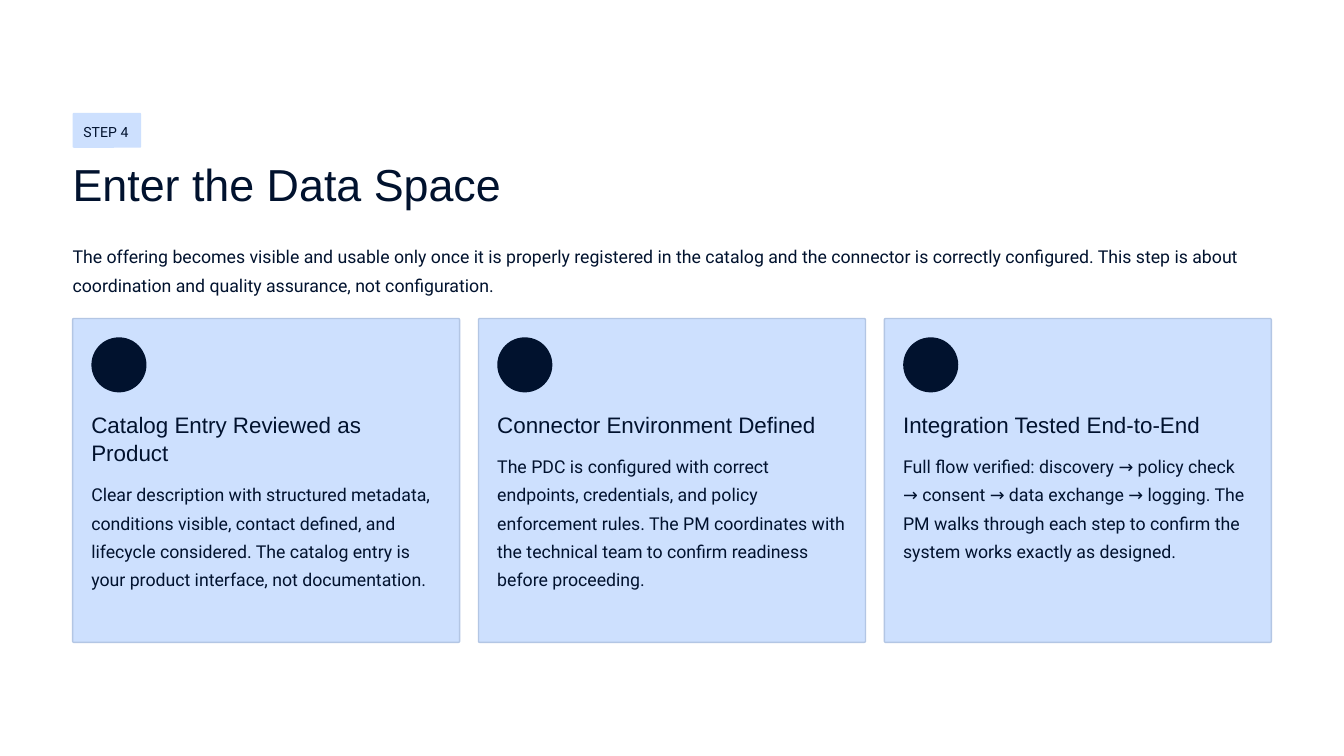
from pptx import Presentation
from pptx.dml.color import RGBColor
from pptx.enum.shapes import MSO_SHAPE
from pptx.util import Inches, Pt

ROUND = MSO_SHAPE.ROUNDED_RECTANGLE
OVAL = MSO_SHAPE.OVAL
WHITE = RGBColor(0xFF, 0xFF, 0xFF)
NAVY = RGBColor(0x01, 0x12, 0x2E)
SKY = RGBColor(0xCD, 0xE0, 0xFE)
EDGE = RGBColor(0xB3, 0xC6, 0xE4)

WIDTH = 10
HEIGHT = WIDTH * 9 / 16
LEFT, STEP = 0.54, 3.02
WIDE, TALL, TOP = 2.88, 2.41, 2.37
PAD, DOT, ROW, BEND = 0.14, 0.41, 0.21, 0.01
HEAD_Y = 3.05

STYLES = {
    "tag": (1.33, {"name": "Roboto", "size": Pt(7.5)}),
    "title": (1.04, {"name": "Arial", "size": Pt(24)}),
    "head": (1.04, {"name": "Arial", "size": Pt(12)}),
    "body": (1.33, {"name": "Roboto", "size": Pt(9.5)}),
}

CARDS = [
    ("Catalog Entry Reviewed as Product", 2,
     "Clear description with structured metadata, conditions visible, contact defined, "
     "and lifecycle considered. The catalog entry is your product interface, not documentation."),
    ("Connector Environment Defined", 1,
     "The PDC is configured with correct endpoints, credentials, and policy enforcement rules. "
     "The PM coordinates with the technical team to confirm readiness before proceeding."),
    ("Integration Tested End-to-End", 1,
     "Full flow verified: discovery → policy check → consent → data exchange → logging. "
     "The PM walks through each step to confirm the system works exactly as designed."),
]

deck = Presentation()
deck.slide_width, deck.slide_height = Inches(WIDTH), Inches(HEIGHT)
slide = deck.slides.add_slide(deck.slide_layouts[6])
slide.background.fill.solid()
slide.background.fill.fore_color.rgb = WHITE


def add_form(kind, box, fill, edge=None):
    form = slide.shapes.add_shape(kind, *map(Inches, box))
    form.shadow.inherit = False
    form.fill.solid()
    form.fill.fore_color.rgb = fill
    if kind == ROUND:
        form.adjustments[0] = BEND / min(box[2:])
    if edge:
        form.line.color.rgb = edge
        form.line.width = Pt(0.75)
    else:
        form.line.fill.background()


def add_text(box, text, style):
    frame = slide.shapes.add_textbox(*map(Inches, box)).text_frame
    frame.word_wrap = True
    for side in ("left", "right", "top", "bottom"):
        setattr(frame, f"margin_{side}", 0)
    line = frame.paragraphs[0]
    run = line.add_run()
    run.text = text
    line.line_spacing, looks = STYLES[style]
    for key, value in looks.items():
        setattr(run.font, key, value)
    run.font.color.rgb = NAVY


add_form(ROUND, (LEFT, 0.84, 0.51, 0.26), SKY)
add_text((LEFT + 0.08, 0.88, 0.85, 0.17), "STEP 4", "tag")
add_text((LEFT, 1.15, 3.91, 0.42), "Enter the Data Space", "title")
add_text((LEFT, 1.78, 8.91, 0.43),
         "The offering becomes visible and usable only once it is properly registered in the catalog "
         "and the connector is correctly configured. This step is about coordination and quality "
         "assurance, not configuration.", "body")

for col, (head, rows, body) in enumerate(CARDS):
    left = LEFT + col * STEP
    text_x = left + PAD
    text_w = WIDE - 2 * PAD
    body_y = HEAD_Y + rows * ROW + 0.08
    add_form(ROUND, (left, TOP, WIDE, TALL), SKY, EDGE)
    add_form(OVAL, (text_x, TOP + PAD, DOT, DOT), NAVY)
    add_text((text_x, HEAD_Y, text_w, rows * ROW), head, "head")
    add_text((text_x, body_y, text_w, 1.09), body, "body")

deck.save("out.pptx")
